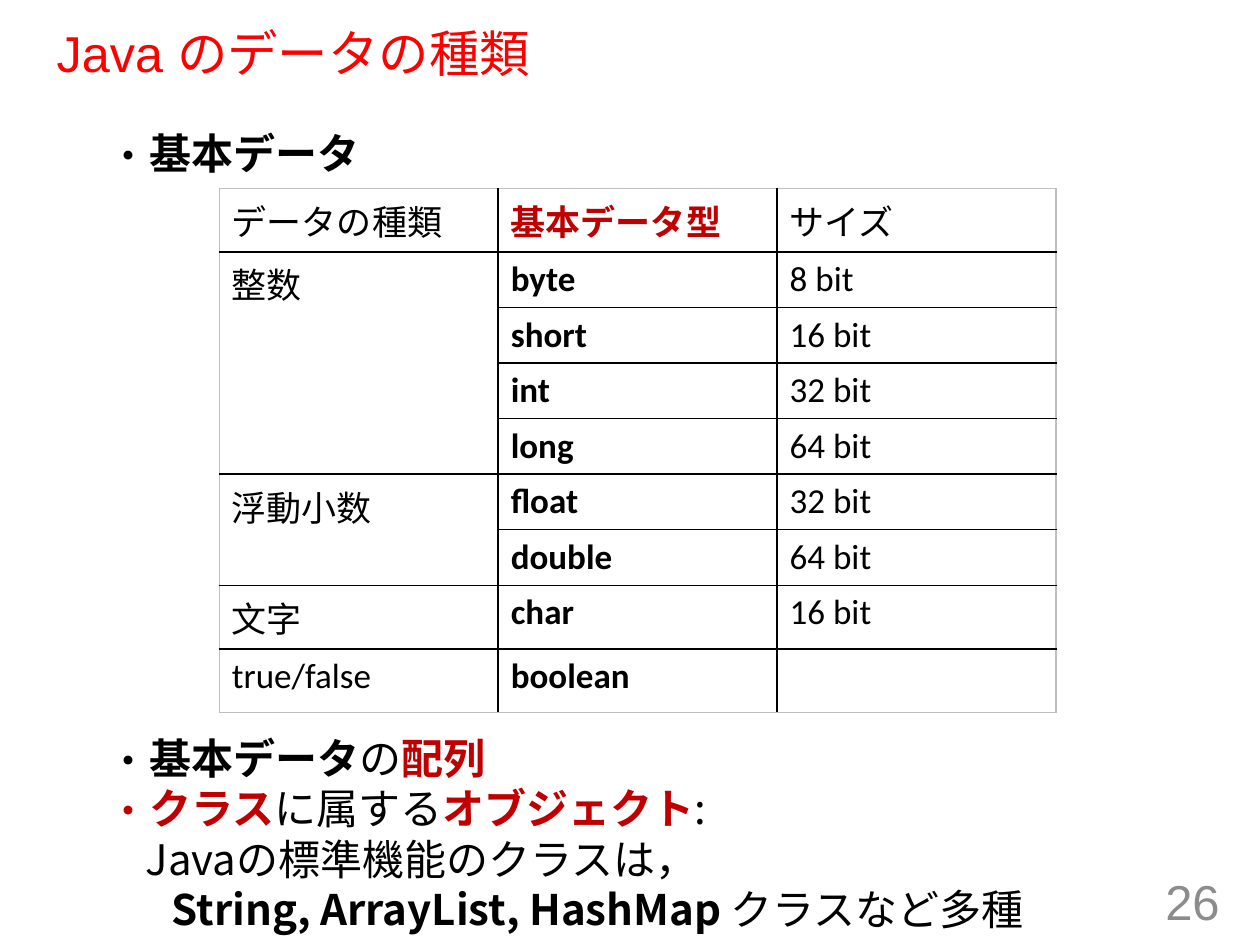
from lxml import etree
from pptx import Presentation
from pptx.dml.color import RGBColor
from pptx.enum.text import MSO_ANCHOR, MSO_AUTO_SIZE, PP_ALIGN
from pptx.oxml.ns import qn
from pptx.util import Pt

LEFT, RIGHT = PP_ALIGN.LEFT, PP_ALIGN.RIGHT
MIDDLE = MSO_ANCHOR.MIDDLE
NO_FIT = MSO_AUTO_SIZE.NONE

BLACK = RGBColor(0, 0, 0)
RED = RGBColor(0xFF, 0, 0)
DARK_RED = RGBColor(0xC0, 0, 0)
GREY = RGBColor(0x8C, 0x8C, 0x8C)
PALE = RGBColor(0xBF, 0xBF, 0xBF)

ARIAL, CALIBRI, NOTO = "Arial", "Calibri", "Noto Sans CJK JP"
LINE = 28.8

# Each line: bullet?, indent, space before, runs of (text, colour, bold)
LINES = [
    (True, 24, 0, [("基本データ", BLACK, True)]),
    (True, 24, 11 * LINE, [("基本データ", BLACK, True), ("の", BLACK, False),
                           ("配列", DARK_RED, True)]),
    (True, 24, 0, [("クラス", DARK_RED, True), ("に属する", BLACK, False),
                   ("オブジェクト", DARK_RED, True), (":", BLACK, False)]),
    (False, 22, 0, [("Javaの標準機能のクラスは，", BLACK, False)]),
    (False, 37, 0, [("String, ArrayList, HashMap ", BLACK, True),
                    ("クラスなど多種", BLACK, False)]),
]

ROWS = [
    ("データの種類", "基本データ型", "サイズ"),
    ("整数", "byte", "8 bit"),
    ("", "short", "16 bit"),
    ("", "int", "32 bit"),
    ("", "long", "64 bit"),
    ("浮動小数", "float", "32 bit"),
    ("", "double", "64 bit"),
    ("文字", "char", "16 bit"),
    ("true/false", "boolean", ""),
]
HEIGHTS = [36.3] + [31.75] * 6 + [36.3] * 2
SPANS = [(1, 4), (5, 6)]  # first and last row of each merged kind


class Deck:
    def __init__(self):
        self.prs = Presentation()
        self.prs.slide_width, self.prs.slide_height = Pt(720), Pt(540)
        self.slide = self.prs.slides.add_slide(self.prs.slide_layouts[1])

    def style(self, run, size, color, bold=False, name=NOTO):
        font = run.font
        font.size, font.bold, font.name = Pt(size), bold, name
        font.color.rgb = color
        east = etree.SubElement(run._r.get_or_add_rPr(), qn("a:ea"))
        east.set("typeface", NOTO)

    def place(self, shape, left, top, width, height):
        shape.left, shape.top = Pt(left), Pt(top)
        shape.width, shape.height = Pt(width), Pt(height)

    def title(self, text, *box):
        shape = self.slide.shapes.title
        self.place(shape, *box)
        frame = shape.text_frame
        frame.text = text
        frame.auto_size, frame.vertical_anchor = NO_FIT, MIDDLE
        para = frame.paragraphs[0]
        para.alignment, para.line_spacing = LEFT, 0.9
        self.style(para.runs[0], 28.8, RED, name=ARIAL)

    def bullet(self, para, shown, indent):
        props = para._p.get_or_add_pPr()
        props.set("marL", str(Pt(indent)))
        props.set("indent", str(-Pt(indent) if shown else 0))
        if shown:
            etree.SubElement(props, qn("a:buFont")).set("typeface", NOTO)
            etree.SubElement(props, qn("a:buChar")).set("char", "・")
        else:
            etree.SubElement(props, qn("a:buNone"))

    def body(self, lines, *box):
        shape = self.slide.placeholders[1]
        self.place(shape, *box)
        frame = shape.text_frame
        frame.auto_size = NO_FIT
        for i, (shown, indent, gap, runs) in enumerate(lines):
            para = frame.add_paragraph() if i else frame.paragraphs[0]
            self.bullet(para, shown, indent)
            para.line_spacing, para.space_before = Pt(LINE), Pt(gap)
            for text, color, bold in runs:
                run = para.add_run()
                run.text = text
                self.style(run, 24, color, bold)

    def number(self, text, *box):
        shape = self.slide.shapes.add_textbox(*map(Pt, box))
        frame = shape.text_frame
        frame.word_wrap, frame.vertical_anchor = True, MIDDLE
        frame.text = text
        para = frame.paragraphs[0]
        para.alignment = RIGHT
        self.style(para.runs[0], 28, GREY, name=ARIAL)

    def edge(self, cell, side, color):
        props = cell._tc.get_or_add_tcPr()
        line = etree.SubElement(props, qn("a:ln" + side), w=str(Pt(1)))
        fill = etree.SubElement(line, qn("a:solidFill"))
        etree.SubElement(fill, qn("a:srgbClr"), val=str(color))

    def table(self, rows, left, top, width):
        count, span = len(rows), len(rows[0])
        table = self.slide.shapes.add_table(
            count, span, Pt(left), Pt(top), Pt(width), Pt(sum(HEIGHTS))).table
        table.first_row = table.horz_banding = False
        for row, height in zip(table.rows, HEIGHTS):
            row.height = Pt(height)
        for r, row in enumerate(rows):
            for c, text in enumerate(row):
                cell = table.cell(r, c)
                outer = {"L": c == 0, "R": c == span - 1,
                         "T": r == 0, "B": r == count - 1}
                for side, rim in outer.items():
                    self.edge(cell, side, PALE if rim else BLACK)
                cell.fill.background()
                cell.text = text
                key = c == 1
                color = DARK_RED if key and r == 0 else BLACK
                for run in cell.text_frame.paragraphs[0].runs:
                    self.style(run, 20, color, key, CALIBRI)
        for first, last in SPANS:
            table.cell(first, 0).merge(table.cell(last, 0))


def main():
    deck = Deck()
    deck.body(LINES, 54, 69.4, 574, 470)
    deck.title("Java のデータの種類", 25.2, 13.7, 666, 36.7)
    deck.number("26", 542, 500.4, 162, 28.8)
    deck.table(ROWS, 125.3, 107.7, 478.2)
    deck.prs.save("out.pptx")


if __name__ == "__main__":
    main()
